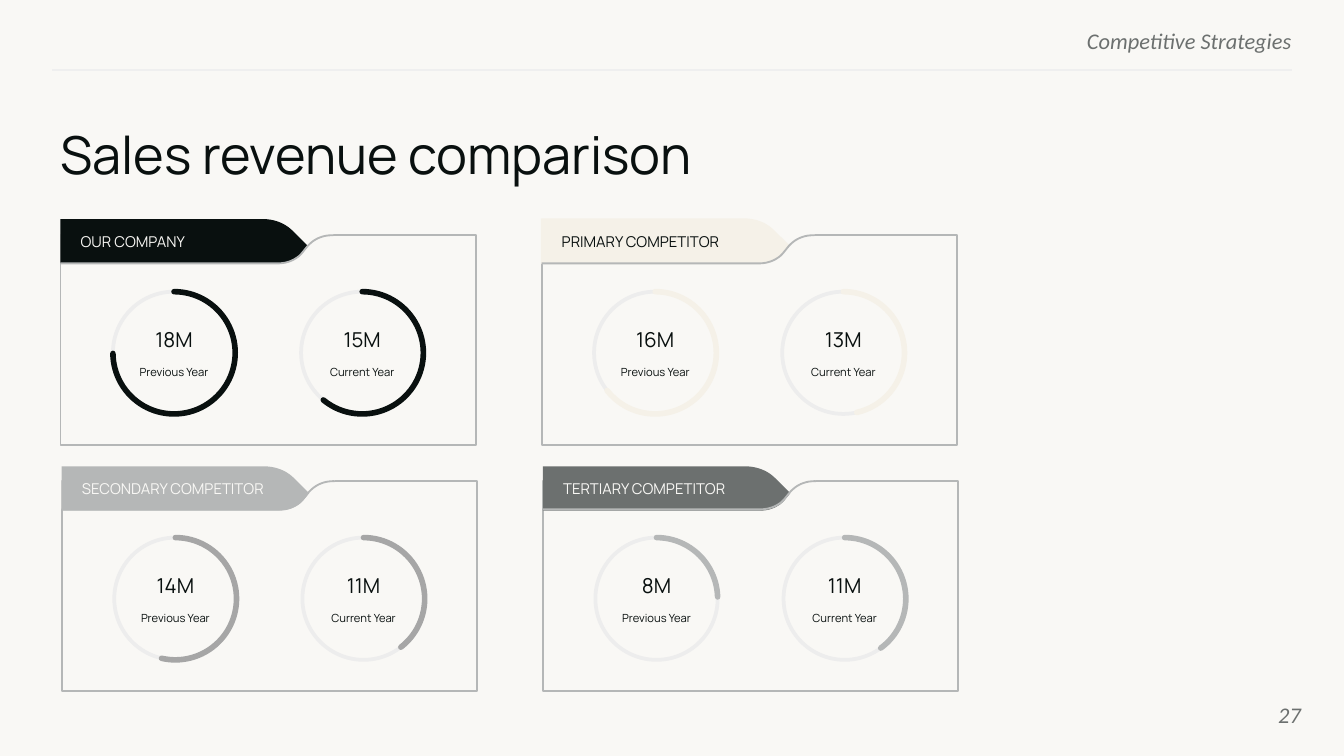
from pptx import Presentation
from pptx.dml.color import RGBColor
from pptx.enum.shapes import MSO_CONNECTOR, MSO_SHAPE
from pptx.enum.text import MSO_ANCHOR, MSO_AUTO_SIZE, PP_ALIGN
from pptx.oxml import parse_xml
from pptx.oxml.ns import nsdecls
from pptx.util import Inches, Pt

OVAL, ARC, RECTANGLE = MSO_SHAPE.OVAL, MSO_SHAPE.ARC, MSO_SHAPE.RECTANGLE
LEFT, CENTER, RIGHT = PP_ALIGN.LEFT, PP_ALIGN.CENTER, PP_ALIGN.RIGHT
TOP, MIDDLE = MSO_ANCHOR.TOP, MSO_ANCHOR.MIDDLE
NO_AUTOFIT = MSO_AUTO_SIZE.NONE
STRAIGHT = MSO_CONNECTOR.STRAIGHT

PAPER, INK, GREY, SILVER, CREAM = "F9F8F5", "09100F", "6C706F", "B5B7B7", "F5F1E8"
TRACK, RULE, MID_GREY = "EDEDED", "EFEFEF", "A6A6A6"

CARD_WIDTH, CARD_HEIGHT = 3.09, 1.56
COLUMN_STEP, ROW_STEP, ROW_SHIFT = 3.58, 1.83, 0.01
RING_SIZE, RING_STEP = 0.91, 1.4

# Name, tab fill, tab text, ring colour, (amount, arc end in degrees) per year
COMPANIES = [
    ("OUR COMPANY", INK, PAPER, INK, [("18M", 179.4), ("15M", 129.51)]),
    ("PRIMARY COMPETITOR", CREAM, INK, CREAM, [("16M", 141.92), ("13M", 77.37)]),
    ("SECONDARY COMPETITOR", SILVER, PAPER, MID_GREY, [("14M", 103.05), ("11M", 52.37)]),
    ("TERTIARY COMPETITOR", GREY, PAPER, SILVER, [("8M", 358.3), ("11M", 53.84)]),
]
YEARS = ["Previous Year", "Current Year"]


def rgb(code):
    return RGBColor.from_string(code)


def style(shape, fill=None, line=None, weight=1):
    shape.shadow.inherit = False
    if fill:
        shape.fill.solid()
        shape.fill.fore_color.rgb = rgb(fill)
    else:
        shape.fill.background()
    if line:
        shape.line.color.rgb = rgb(line)
        shape.line.width = Pt(weight)
    else:
        shape.line.fill.background()


def set_frame(frame, anchor, margins=(0, 0, 0, 0)):
    frame.word_wrap = True
    frame.auto_size = NO_AUTOFIT
    frame.vertical_anchor = anchor
    (frame.margin_left, frame.margin_top,
     frame.margin_right, frame.margin_bottom) = map(Inches, margins)


def write(para, text, size, color, align=LEFT, font="Manrope", italic=False):
    para.alignment = align
    span = para.add_run()
    span.text = text
    span.font.size = Pt(size)
    span.font.name = font
    span.font.italic = italic
    span.font.color.rgb = rgb(color)


def add_text_box(page, left, top, width, height, anchor=MIDDLE):
    box = page.shapes.add_textbox(*map(Inches, (left, top, width, height)))
    set_frame(box.text_frame, anchor)
    return box.text_frame


def curve(start, control_1, control_2, end, steps=12):
    """Points along a cubic curve, both ends included."""
    points = []
    for step in range(steps + 1):
        t = step / steps
        weights = ((1 - t) ** 3, 3 * t * (1 - t) ** 2, 3 * t * t * (1 - t), t ** 3)
        points.append(tuple(
            sum(weight * value for weight, value in zip(weights, axis))
            for axis in zip(start, control_1, control_2, end)))
    return points


LOWER_BEND = curve((1.62, 0.21), (1.69, 0.21), (1.76, 0.18), (1.8, 0.13))
UPPER_BEND = curve((1.85, 0.07), (1.9, 0.02), (1.96, 0), (2.03, 0))
SHOULDER = curve((1.5, -0.12), (1.59, -0.12), (1.67, -0.09), (1.73, -0.03))
NOTCH_EDGE = [(0, 0.21), *LOWER_BEND, (1.84, 0.08), *UPPER_BEND]
NOTCH_MASK = [*NOTCH_EDGE, (2.03, -0.09), (0, -0.09)]
TAB_OUTLINE = [(0, -0.12), *SHOULDER, (1.84, 0.08), *reversed(LOWER_BEND), (0, 0.21)]


def add_outline(page, left, top, points, close=True):
    placed = [(Inches(left + x), Inches(top + y)) for x, y in points]
    builder = page.shapes.build_freeform(*placed[0])
    builder.add_line_segments(placed[1:], close=close)
    return builder.convert_to_shape()


def add_ring(page, left, top, amount, year, end_angle, color):
    bounds = [Inches(value) for value in (left, top, RING_SIZE, RING_SIZE)]
    style(page.shapes.add_shape(OVAL, *bounds), line=TRACK, weight=2)
    arc = page.shapes.add_shape(ARC, *bounds)
    # Adjustments count 60000ths of a degree, divided by 100000
    arc.adjustments[0] = 270 * 0.6
    arc.adjustments[1] = end_angle * 0.6
    style(arc, line=color, weight=3)
    arc.line._get_or_add_ln().set("cap", "rnd")

    frame = add_text_box(page, left + 0.08, top + 0.26, 0.75, 0.38)
    number, caption = frame.paragraphs[0], frame.add_paragraph()
    number.line_spacing, caption.line_spacing = 1.07, 2.0
    write(number, amount, 11, INK, CENTER)
    write(caption, year, 6, INK, CENTER)


def add_card(page, left, top, tab_drop, name, tab_fill, tab_text, ring_color, results):
    body = page.shapes.add_shape(
        RECTANGLE, *map(Inches, (left, top, CARD_WIDTH, CARD_HEIGHT)))
    style(body, PAPER, SILVER)
    style(add_outline(page, left, top, NOTCH_MASK), PAPER)

    tab = add_outline(page, left, top + tab_drop, TAB_OUTLINE)
    style(tab, tab_fill, tab_fill if tab_fill == CREAM else None, 0.75)
    set_frame(tab.text_frame, MIDDLE, (0.15, 0.04, 0.07, 0.04))
    write(tab.text_frame.paragraphs[0], name, 8, tab_text)

    style(add_outline(page, left, top, NOTCH_EDGE, close=False), line=SILVER)
    for index, (year, (amount, end_angle)) in enumerate(zip(YEARS, results)):
        add_ring(page, left + 0.39 + index * RING_STEP, top + 0.42,
                 amount, year, end_angle, ring_color)


def add_header(page, left, top, width):
    frame = add_text_box(page, left + width - 3.85, top, 3.85, 0.18, TOP)
    write(frame.paragraphs[0], "Competitive Strategies", 12, GREY, RIGHT, "Calibri", True)
    rule_y = Inches(top + 0.32)
    rule = page.shapes.add_connector(
        STRAIGHT, Inches(left + width), rule_y, Inches(left), rule_y)
    rule.line.color.rgb = rgb(RULE)
    rule.line.width = Pt(0.75)
    rule._element.spPr.append(parse_xml(f"<a:effectLst {nsdecls('a')}/>"))


def add_title(page, left, top, width, height):
    title = page.shapes.title
    title.left, title.top, title.width, title.height = map(
        Inches, (left, top, width, height))
    set_frame(title.text_frame, TOP)
    para = title.text_frame.paragraphs[0]
    para.space_after = Pt(10)
    write(para, "Sales revenue comparison", 28, INK)


def add_page_number(page, left, top, width, height):
    frame = add_text_box(page, left, top, width, height)
    write(frame.paragraphs[0], "27", 12, GREY, RIGHT, "Calibri", True)


def main():
    deck = Presentation()
    deck.slide_width = Inches(10)
    deck.slide_height = deck.slide_width * 9 // 16
    page = deck.slides.add_slide(deck.slide_layouts[5])
    page.background.fill.solid()
    page.background.fill.fore_color.rgb = rgb(PAPER)

    add_header(page, 0.39, 0.2, 9.22)
    add_title(page, 0.45, 0.91, 9.23, 0.51)
    for index, company in enumerate(COMPANIES):
        row, column = divmod(index, 2)
        shift = row * ROW_SHIFT
        add_card(page, 0.45 + column * COLUMN_STEP + shift, 1.75 + row * ROW_STEP,
                 shift, *company)
    add_page_number(page, 9.08, 5.1, 0.6, 0.43)
    deck.save("out.pptx")


if __name__ == "__main__":
    main()
